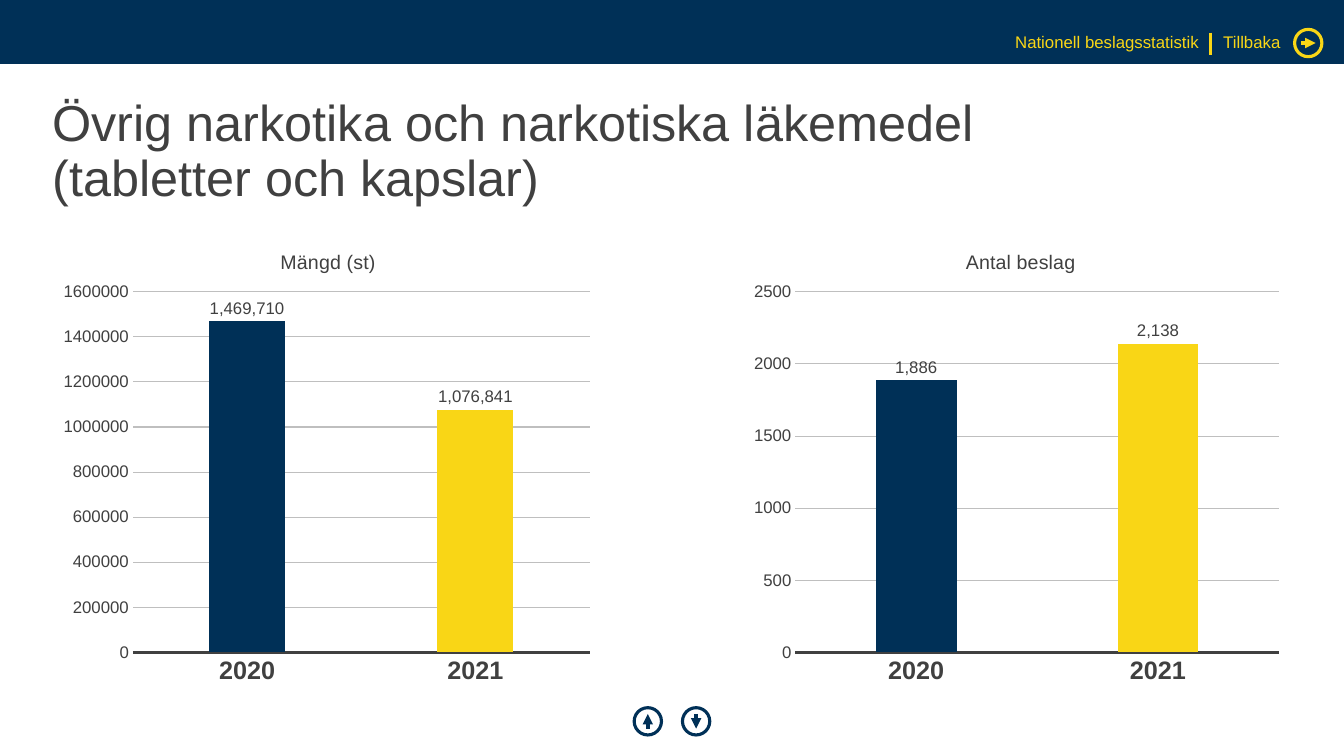
from dataclasses import dataclass
from typing import Any

from lxml.etree import SubElement
from pptx import Presentation
from pptx.chart.data import CategoryChartData
from pptx.dml.color import RGBColor
from pptx.enum.chart import XL_CHART_TYPE as ChartType
from pptx.enum.chart import XL_LABEL_POSITION as LabelPosition
from pptx.enum.chart import XL_TICK_MARK as TickMark
from pptx.enum.shapes import MSO_CONNECTOR as Connector
from pptx.enum.shapes import MSO_SHAPE as Preset
from pptx.enum.text import MSO_ANCHOR as Anchor
from pptx.enum.text import PP_ALIGN as Align
from pptx.oxml.ns import qn
from pptx.util import Emu, Pt


@dataclass(frozen=True)
class Theme:
    font: str = "Arial"
    navy: RGBColor = RGBColor(0x00, 0x30, 0x57)
    yellow: RGBColor = RGBColor(0xF9, 0xD6, 0x16)
    text: RGBColor = RGBColor(0x40, 0x40, 0x40)
    grid: RGBColor = RGBColor(0xBF, 0xBF, 0xBF)
    title_size: int = 36
    category_size: int = 18
    chart_title_size: int = 14
    small_size: int = 12


@dataclass(frozen=True)
class Box:
    left: int
    top: int
    width: int
    height: int


@dataclass(frozen=True)
class Label:
    text: str
    box: Box
    size: int
    color: RGBColor
    align: Align = Align.LEFT
    anchor: Anchor = Anchor.TOP


@dataclass(frozen=True)
class ArrowButton:
    x: int
    y: int
    step_x: int
    step_y: int
    color: RGBColor


@dataclass(frozen=True)
class BarChart:
    title: str
    box: Box
    values: tuple[int, int]
    maximum: int
    major_unit: int
    title_left: float
    plot_left: float
    plot_width: float


THEME = Theme()
PX = 9525
YEARS = ("2020", "2021")
YEAR_COLORS = (THEME.navy, THEME.yellow)
BUTTON_RADIUS = 13
ARROW_REACH = 7

LABELS = (
    Label("Övrig narkotika och narkotiska läkemedel\v(tabletter och kapslar)",
          Box(50, 76, 1179, 139), THEME.title_size, THEME.text, anchor=Anchor.MIDDLE),
    Label("Nationell beslagsstatistik", Box(960, 32, 182, 18),
          THEME.small_size, THEME.yellow, Align.RIGHT),
    Label("Tillbaka", Box(1165, 32, 145, 18), THEME.small_size, THEME.yellow),
)
BUTTONS = (
    ArrowButton(1246, 41, 1, 0, THEME.yellow),
    ArrowButton(617, 687, 0, -1, THEME.navy),
    ArrowButton(663, 687, 0, 1, THEME.navy),
)
CHARTS = (
    BarChart("Mängd (st)", Box(50, 216, 521, 446), (1469710, 1076841),
             1600000, 200000, 0.41, 0.147, 0.835),
    BarChart("Antal beslag", Box(708, 216, 521, 446), (1886, 2138),
             2500, 500, 0.4, 0.095, 0.884),
)


def px(length: int) -> Emu:
    return Emu(length * PX)


def place(box: Box) -> tuple[Emu, Emu, Emu, Emu]:
    return px(box.left), px(box.top), px(box.width), px(box.height)


def style_font(font: Any, size: int, color: RGBColor, bold: bool = False) -> None:
    font.name = THEME.font
    font.size = Pt(size)
    font.bold = bold
    font.color.rgb = color


def add_label(slide: Any, label: Label) -> None:
    frame = slide.shapes.add_textbox(*place(label.box)).text_frame
    frame.word_wrap = True
    frame.vertical_anchor = label.anchor
    frame.margin_left = frame.margin_right = frame.margin_top = frame.margin_bottom = 0
    paragraph = frame.paragraphs[0]
    paragraph.text = label.text
    paragraph.alignment = label.align
    paragraph.line_spacing = 0.9
    for run in paragraph.runs:
        style_font(run.font, label.size, label.color)


def add_line(slide: Any, start: tuple[int, int], end: tuple[int, int],
             color: RGBColor, width: float, arrow: bool = False) -> None:
    line = slide.shapes.add_connector(
        Connector.STRAIGHT, px(start[0]), px(start[1]), px(end[0]), px(end[1]))
    line.line.color.rgb = color
    line.line.width = Pt(width)
    properties = line._element.spPr
    if arrow:
        SubElement(properties.find(qn("a:ln")), qn("a:tailEnd"), type="triangle")
    SubElement(properties, qn("a:effectLst"))


def add_button(slide: Any, button: ArrowButton) -> None:
    diameter = 2 * BUTTON_RADIUS
    circle = slide.shapes.add_shape(Preset.OVAL, *place(Box(
        button.x - BUTTON_RADIUS, button.y - BUTTON_RADIUS, diameter, diameter)))
    circle.shadow.inherit = False
    circle.fill.background()
    circle.line.color.rgb = button.color
    circle.line.width = Pt(2.25)
    reach_x, reach_y = button.step_x * ARROW_REACH, button.step_y * ARROW_REACH
    add_line(slide, (button.x - reach_x, button.y - reach_y),
             (button.x + reach_x, button.y + reach_y), button.color, 2.5, arrow=True)


def set_layout(parent: Any, position: int, **values: Any) -> None:
    for existing in parent.findall(qn("c:layout")):
        parent.remove(existing)
    layout = SubElement(parent, qn("c:layout"))
    manual = SubElement(layout, qn("c:manualLayout"))
    for name, value in values.items():
        SubElement(manual, qn(f"c:{name}"), val=str(value))
    parent.insert(position, layout)


def add_bar_chart(slide: Any, item: BarChart) -> None:
    data = CategoryChartData()
    data.categories = YEARS
    data.add_series(item.title, item.values)
    chart = slide.shapes.add_chart(
        ChartType.COLUMN_CLUSTERED, *place(item.box), data).chart
    style_font(chart.font, THEME.small_size, THEME.text)
    chart.has_legend = False
    chart.has_title = True
    title = chart.chart_title
    title.text_frame.text = item.title
    style_font(title.text_frame.paragraphs[0].runs[0].font,
               THEME.chart_title_size, THEME.text)
    set_layout(title.element, 1, xMode="edge", yMode="edge", x=item.title_left, y=0.04)
    set_layout(chart.element.find(".//" + qn("c:plotArea")), 0,
               layoutTarget="inner", xMode="edge", yMode="edge",
               x=item.plot_left, y=0.139, w=item.plot_width, h=0.77)

    plot = chart.plots[0]
    plot.vary_by_categories = False
    plot.gap_width = 200
    plot.overlap = -27
    plot.has_data_labels = True
    labels = plot.data_labels
    labels.show_value = True
    labels.position = LabelPosition.OUTSIDE_END
    labels.number_format = "#,##0"
    labels.number_format_is_linked = False
    style_font(labels.font, THEME.small_size, THEME.text)
    for index, color in enumerate(YEAR_COLORS):
        fill = plot.series[0].points[index].format.fill
        fill.solid()
        fill.fore_color.rgb = color

    years, amounts = chart.category_axis, chart.value_axis
    for axis in (years, amounts):
        axis.major_tick_mark = axis.minor_tick_mark = TickMark.NONE
    style_font(years.tick_labels.font, THEME.category_size, THEME.text, bold=True)
    years.format.line.color.rgb = THEME.text
    years.format.line.width = Pt(2.25)
    style_font(amounts.tick_labels.font, THEME.small_size, THEME.text)
    amounts.tick_labels.number_format = "0"
    amounts.tick_labels.number_format_is_linked = False
    amounts.minimum_scale, amounts.maximum_scale = 0, item.maximum
    amounts.major_unit = item.major_unit
    amounts.format.line.fill.background()
    amounts.major_gridlines.format.line.color.rgb = THEME.grid
    amounts.major_gridlines.format.line.width = Pt(0.75)


def main() -> None:
    presentation = Presentation()
    presentation.slide_width, presentation.slide_height = px(1280), px(720)
    slide = presentation.slides.add_slide(presentation.slide_layouts[6])
    header = slide.shapes.add_shape(Preset.RECTANGLE, *place(Box(0, 0, 1280, 61)))
    header.shadow.inherit = False
    header.fill.solid()
    header.fill.fore_color.rgb = THEME.navy
    header.line.fill.background()
    for label in LABELS:
        add_label(slide, label)
    add_line(slide, (1153, 31), (1153, 52), THEME.yellow, 2.25)
    for item in CHARTS:
        add_bar_chart(slide, item)
    for button in BUTTONS:
        add_button(slide, button)
    presentation.save("out.pptx")


if __name__ == "__main__":
    main()
